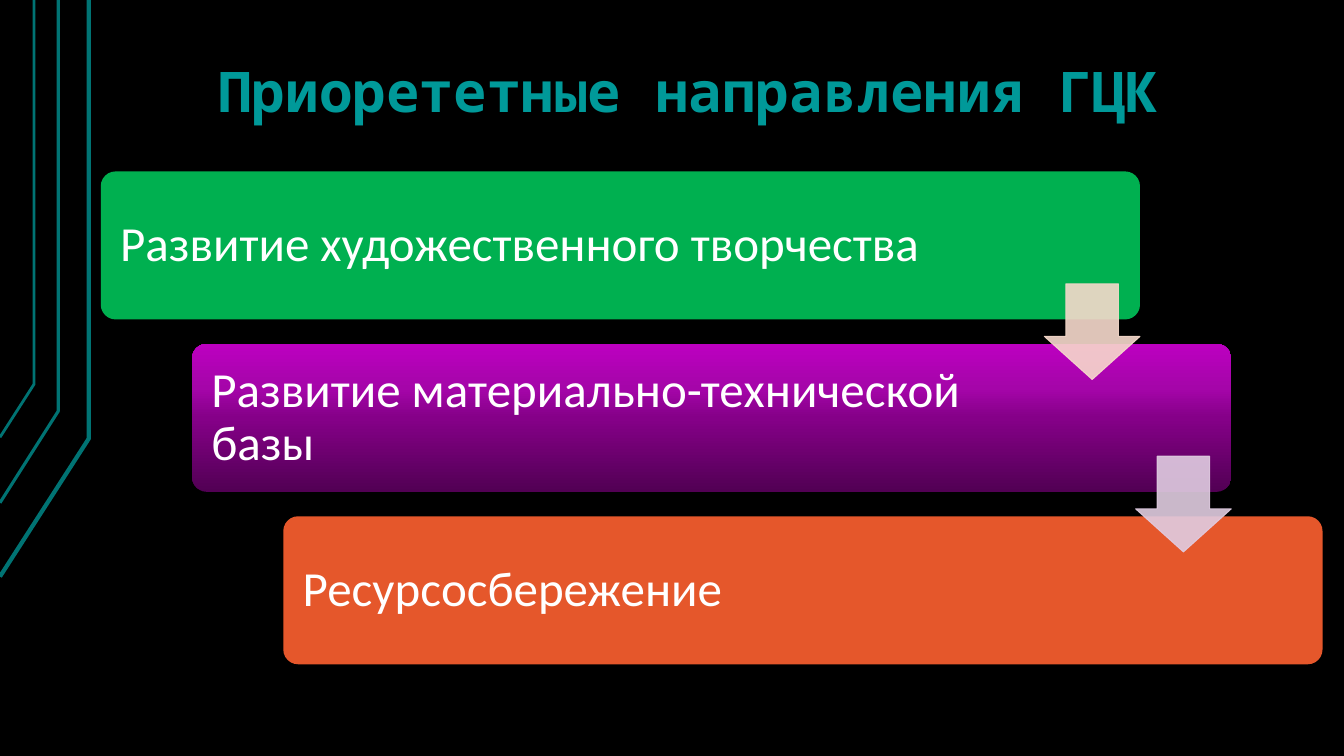
import lxml.etree
import pptx
import pptx.dml.color
import pptx.enum.shapes
import pptx.enum.text
import pptx.oxml.ns
import pptx.util

Cm = pptx.util.Cm
Pt = pptx.util.Pt
SHAPES = pptx.enum.shapes.MSO_SHAPE
ANCHOR = pptx.enum.text.MSO_ANCHOR
ALIGN = pptx.enum.text.PP_ALIGN
qn = pptx.oxml.ns.qn

PURPLE_STOPS = [(0, "520054"), (50, "850088"), (70, "A505A9"), (100, "BC00C0")]

# Text, fill (one colour or gradient stops), width left for the text in cm
PRIORITIES = [
    ("Развитие художественного творчества", "00B050", 22.38),
    ("Развитие материально-технической базы", PURPLE_STOPS, 21.46),
    ("Ресурсосбережение", "E5572B", 21.46),
]
ARROW_COLOURS = ["F7DACC", "E0CCE1"]

# Line width in pt, then x of the vertical, y of the bend, y at the slide edge in cm
EDGE_LINES = [(3, 2.24, 11.05, 14.53), (2.25, 1.47, 10.36, 12.67), (2, 0.86, 9.68, 11.02)]


def colour(value):
    return pptx.dml.color.RGBColor.from_string(value)


def set_attributes(target, values):
    for name, value in values.items():
        setattr(target, name, value)


def set_solid(fill, value, alpha=None):
    fill.solid()
    fill.fore_color.rgb = colour(value)
    if alpha is not None:
        for element in fill._xPr.iter(qn("a:srgbClr")):
            lxml.etree.SubElement(element, qn("a:alpha"), val=str(alpha * 1000))


def set_gradient(fill, stops):
    fill.gradient()
    fill.gradient_angle = 90
    stop_list = next(fill._xPr.iter(qn("a:gsLst")))
    for old_stop in list(stop_list):
        stop_list.remove(old_stop)
    for position, value in stops:
        stop = lxml.etree.SubElement(stop_list, qn("a:gs"), pos=str(position * 1000))
        lxml.etree.SubElement(stop, qn("a:srgbClr"), val=value)


def write_text(frame, text, frame_format, para_format, font_format, font_colour):
    set_attributes(frame, frame_format)
    para = frame.paragraphs[0]
    set_attributes(para, para_format)
    span = para.add_run()
    span.text = text
    set_attributes(span.font, font_format)
    span.font.color.rgb = colour(font_colour)


def add_edge_lines(page):
    for width, x, bend, edge in EDGE_LINES:
        builder = page.shapes.build_freeform(0, Cm(edge))
        builder.add_line_segments([(Cm(x), Cm(bend)), (Cm(x), 0)], close=False)
        line = builder.convert_to_shape()
        line.shadow.inherit = False
        line.fill.background()
        line.line.width = Pt(width)
        line.line.color.rgb = colour("007373")


def add_title(page, left, top, width, height):
    title = page.shapes.title
    set_attributes(title, {"left": left, "top": top, "width": width, "height": height})
    write_text(
        title.text_frame,
        "Приорететные направления ГЦК ",
        {"vertical_anchor": ANCHOR.BOTTOM, "word_wrap": True,
         "auto_size": pptx.enum.text.MSO_AUTO_SIZE.NONE,
         "margin_left": Cm(0.33), "margin_right": Cm(0.33),
         "margin_top": Cm(0.18), "margin_bottom": Cm(0.18)},
        {"alignment": ALIGN.CENTER, "line_spacing": 0.9},
        {"name": "Noto Sans Mono", "size": Pt(40), "bold": True},
        "009999",
    )


def add_card(page, left, top, width, height, text, fill, text_width):
    card = page.shapes.add_shape(SHAPES.ROUNDED_RECTANGLE, left, top, width, height)
    card.adjustments[0] = 0.1
    card.shadow.inherit = False
    card.line.fill.background()
    if isinstance(fill, str):
        set_solid(card.fill, fill)
    else:
        set_gradient(card.fill, fill)
    inset = Cm(0.38)
    write_text(
        card.text_frame,
        text,
        {"vertical_anchor": ANCHOR.MIDDLE, "word_wrap": True,
         "margin_left": inset, "margin_right": width - Cm(text_width) + inset,
         "margin_top": inset, "margin_bottom": inset},
        {"alignment": ALIGN.LEFT, "line_spacing": 0.9},
        {"name": "Calibri", "size": Pt(35)},
        "FFFFFF",
    )


def add_arrow(page, left, top, size, value):
    arrow = page.shapes.add_shape(SHAPES.DOWN_ARROW, left, top, size, size)
    arrow.adjustments[0] = 0.55
    arrow.adjustments[1] = 0.45
    arrow.shadow.inherit = False
    set_solid(arrow.fill, value, 90)
    arrow.line.width = Pt(0.75)
    set_solid(arrow.line.fill, value, 90)


def add_staircase(page, left, top, width, height):
    card_width, card_height, arrow_size = Cm(26.19), Cm(3.73), Cm(2.41)
    steps = len(PRIORITIES) - 1
    step_x = (width - card_width) // steps
    step_y = (height - card_height) // steps
    gap = step_y - card_height

    # Cards, each a step right and down
    for index, (text, fill, text_width) in enumerate(PRIORITIES):
        add_card(page, left + index * step_x, top + index * step_y,
                 card_width, card_height, text, fill, text_width)

    # Arrows centred on the gaps, flush with the right edge of the upper card
    for index, value in enumerate(ARROW_COLOURS):
        right = left + index * step_x + card_width
        middle = top + index * step_y + card_height + gap // 2
        add_arrow(page, right - arrow_size, middle - arrow_size // 2, arrow_size, value)


def main():
    deck = pptx.Presentation()
    deck.slide_width, deck.slide_height = Cm(33.87), Cm(19.05)
    page = deck.slides.add_slide(deck.slide_layouts[5])
    set_solid(page.background.fill, "000000")
    add_edge_lines(page)
    add_title(page, Cm(3.38), Cm(0.76), Cm(28.78), Cm(2.57))
    add_staircase(page, Cm(2.54), Cm(4.32), Cm(30.79), Cm(12.42))
    deck.save("out.pptx")


if __name__ == "__main__":
    main()
